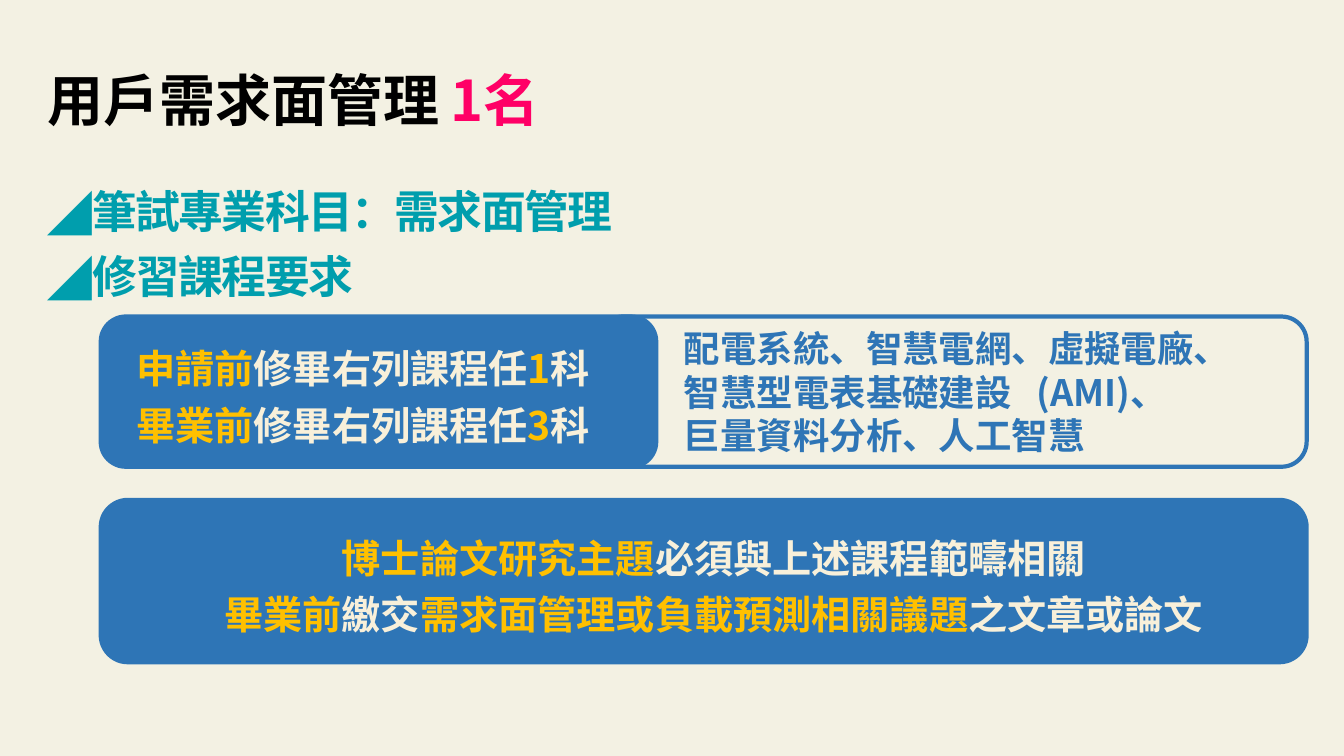
from dataclasses import dataclass
from typing import Optional

from lxml.etree import SubElement
from pptx import Presentation
from pptx.dml.color import RGBColor
from pptx.enum.shapes import MSO_SHAPE
from pptx.enum.text import MSO_ANCHOR, MSO_AUTO_SIZE, PP_ALIGN
from pptx.oxml import parse_xml
from pptx.oxml.ns import nsdecls, qn
from pptx.util import Inches, Pt


@dataclass(frozen=True)
class Theme:
    font: str = "Noto Sans CJK SC"
    paper: str = "F3F1E3"
    ink: str = "000000"
    pink: str = "FF0066"
    teal: str = "009EAD"
    blue: str = "2E75B6"
    gold: str = "FFC000"
    cream: str = "F8F0DA"
    title: int = 40
    heading: int = 32
    rule: int = 28
    course: int = 26
    border: int = 3


@dataclass(frozen=True)
class Area:
    x: float
    y: float
    w: float
    h: float


@dataclass(frozen=True)
class Span:
    text: str
    color: str


@dataclass(frozen=True)
class Style:
    size: int
    align: PP_ALIGN = PP_ALIGN.LEFT
    spacing: float = 1.2
    indent: float = 0
    hanging: float = 0
    bullet: str = ""
    tab: float = 0
    tracking: int = 0


@dataclass(frozen=True)
class Panel:
    area: Area
    fill: Optional[str]
    style: Style
    lines: list[list[Span]]


T = Theme()
WIDTH, HEIGHT = Inches(13.33), Inches(7.5)
MARGIN, LEFT = 2.78, 7.5
RIGHT = 100 - MARGIN
RULE_Y, RULE_H = 41.87, 19.87
COURSE_X = 44.49

TITLE = [[Span("用戶需求面管理\t", T.ink), Span("1名", T.pink)]]
HEADINGS = [
    [Span("筆試專業科目：需求面管理", T.teal)],
    [Span("修習課程要求", T.teal)],
]
COURSES = "配電系統、智慧電網、虛擬電廠、\n智慧型電表基礎建設\t(AMI)、\n巨量資料分析、人工智慧"
RULES = [
    [
        Span(stage, T.gold),
        Span("修畢右列課程任", T.cream),
        Span(count, T.gold),
        Span("科", T.cream),
    ]
    for stage, count in (("申請前", "1"), ("畢業前", "3"))
]
THESIS = [
    [Span("博士論文研究主題", T.gold), Span("必須與上述課程範疇相關", T.cream)],
    [
        Span("畢業前", T.gold),
        Span("繳交", T.cream),
        Span("需求面管理或負載預測相關議題", T.gold),
        Span("之文章或論文", T.cream),
    ],
]
PANELS = [
    Panel(
        Area(COURSE_X, RULE_Y, RIGHT - COURSE_X, RULE_H),
        None,
        Style(T.course, spacing=1, indent=0.5),
        [[Span(COURSES, T.blue)]],
    ),
    Panel(Area(LEFT, RULE_Y, 41.33, RULE_H), T.blue, Style(T.rule), RULES),
    Panel(
        Area(LEFT, 66.13, RIGHT - LEFT, 21.47),
        T.blue,
        Style(T.rule, align=PP_ALIGN.CENTER),
        THESIS,
    ),
]


def rgb(color: str) -> RGBColor:
    return RGBColor.from_string(color)


def box(area: Area) -> tuple[int, int, int, int]:
    return (
        int(WIDTH * area.x / 100),
        int(HEIGHT * area.y / 100),
        int(WIDTH * area.w / 100),
        int(HEIGHT * area.h / 100),
    )


def add_spans(p, spans: list[Span]) -> None:
    for span in spans:
        for i, part in enumerate(span.text.split("\n")):
            if i:
                p.add_line_break()
            r = p.add_run()
            r.text = part
            r.font.color.rgb = rgb(span.color)


def format_paragraph(p, style: Style) -> None:
    p.alignment = style.align
    p.line_spacing = style.spacing
    p.space_before = Pt(0)
    p.font.name = T.font
    p.font.size = Pt(style.size)
    p.font.bold = True
    props = p._p.get_or_add_pPr()
    props.set("marL", str(Inches(style.indent)))
    props.set("indent", str(-Inches(style.hanging)))
    chars = props.find(qn("a:defRPr"))
    chars.set("spc", str(style.tracking))
    SubElement(chars, qn("a:ea")).set("typeface", T.font)
    ns = nsdecls("a")
    if style.bullet:
        chars.addprevious(parse_xml(f'<a:buFont {ns} typeface="{T.font}"/>'))
        chars.addprevious(parse_xml(f'<a:buChar {ns} char="{style.bullet}"/>'))
    if style.tab:
        stop = f'<a:tab pos="{Inches(style.tab)}" algn="l"/>'
        chars.addprevious(parse_xml(f"<a:tabLst {ns}>{stop}</a:tabLst>"))


def write(tf, lines: list[list[Span]], style: Style, anchor: MSO_ANCHOR) -> None:
    tf.word_wrap = True
    tf.auto_size = MSO_AUTO_SIZE.NONE
    tf.vertical_anchor = anchor
    for i, spans in enumerate(lines):
        p = tf.add_paragraph() if i else tf.paragraphs[0]
        add_spans(p, spans)
        format_paragraph(p, style)


def fill_placeholder(sp, area: Area, lines: list[list[Span]], style: Style, anchor: MSO_ANCHOR) -> None:
    sp.left, sp.top, sp.width, sp.height = box(area)
    write(sp.text_frame, lines, style, anchor)


def add_panel(s, panel: Panel) -> None:
    sp = s.shapes.add_shape(MSO_SHAPE.ROUNDED_RECTANGLE, *box(panel.area))
    sp.shadow.inherit = False
    if panel.fill:
        sp.fill.solid()
        sp.fill.fore_color.rgb = rgb(panel.fill)
    else:
        sp.fill.background()
    sp.line.color.rgb = rgb(T.blue)
    sp.line.width = Pt(T.border)
    tf = sp.text_frame
    tf.margin_left = Inches(0.28)
    tf.margin_top = tf.margin_right = tf.margin_bottom = Inches(0.08)
    write(tf, panel.lines, panel.style, MSO_ANCHOR.MIDDLE)


def main() -> None:
    prs = Presentation()
    prs.slide_width, prs.slide_height = WIDTH, HEIGHT
    s = prs.slides.add_slide(prs.slide_layouts[1])
    s.background.fill.solid()
    s.background.fill.fore_color.rgb = rgb(T.paper)
    title_style = Style(T.title, spacing=1, tab=4.24)
    heading_style = Style(T.heading, indent=0.38, hanging=0.38, bullet="◢", tracking=-120)
    fill_placeholder(s.shapes.title, Area(MARGIN, 7.73, 88, 10.8), TITLE, title_style, MSO_ANCHOR.MIDDLE)
    fill_placeholder(s.placeholders[1], Area(MARGIN, 22.27, 91.75, 26.4), HEADINGS, heading_style, MSO_ANCHOR.TOP)
    for panel in PANELS:
        add_panel(s, panel)
    prs.save("out.pptx")


if __name__ == "__main__":
    main()
